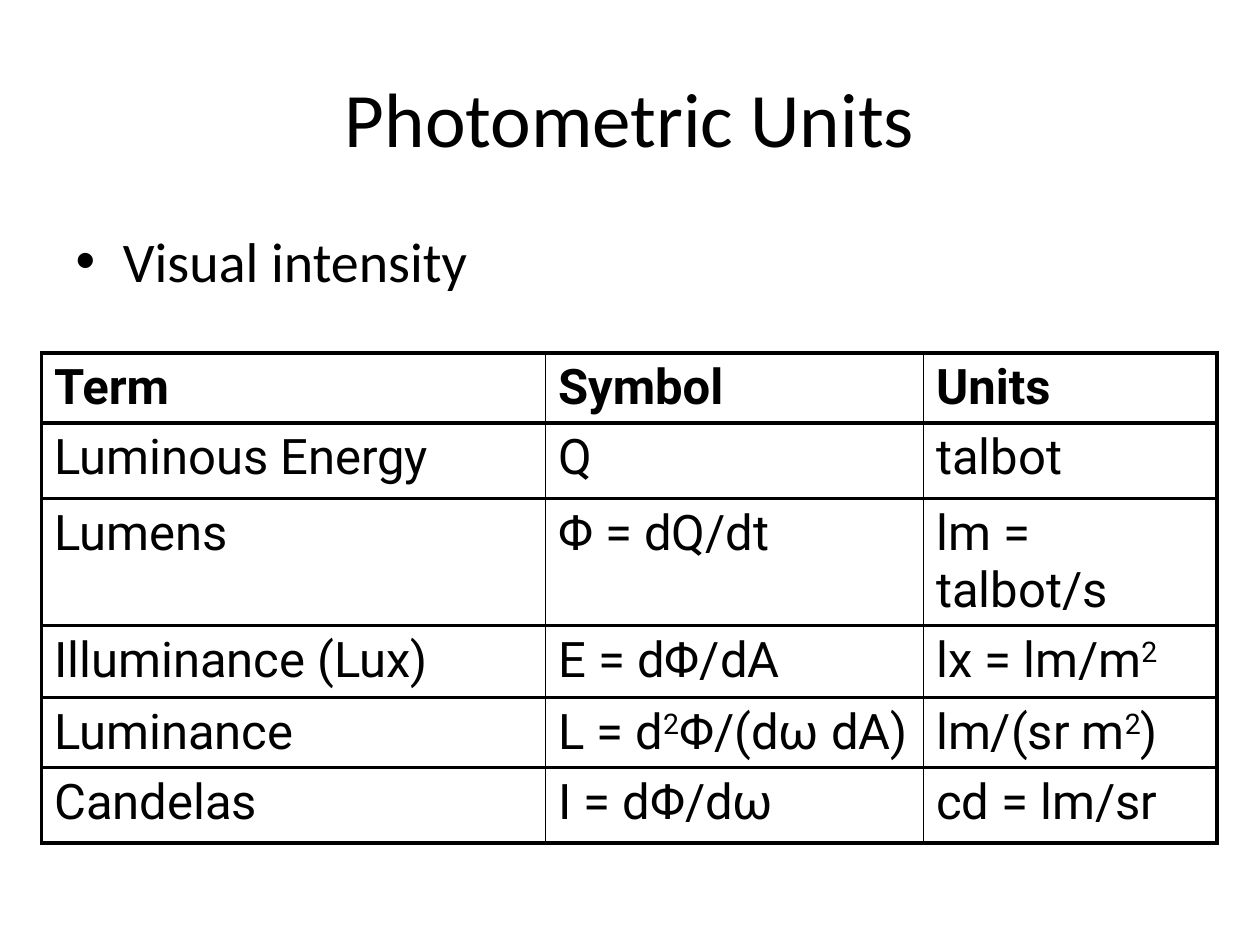
from lxml.etree import SubElement
from pptx import Presentation
from pptx.dml.color import RGBColor
from pptx.enum.text import MSO_ANCHOR, PP_ALIGN
from pptx.oxml.ns import qn
from pptx.util import Inches, Pt

BLACK = RGBColor(0, 0, 0)
THICK, THIN = Pt(2.25), Pt(1)
COLS = [4, 3, 2.33]
ROWS = [0.5, 0.6, 0.6, 0.57, 0.48, 0.6]
UNITS = [
    ["Term", "Symbol", "Units"],
    ["Luminous Energy", "Q", "talbot"],
    ["Lumens", "Φ = dQ/dt", "lm = talbot/s"],
    ["Illuminance (Lux)", "E = dΦ/dA", "lx = lm/m^2^"],
    ["Luminance", "L = d^2^Φ/(dω dA)", "lm/(sr m^2^)"],
    ["Candelas", "I = dΦ/dω", "cd = lm/sr"],
]


def style(run, size, face, bold=False):
    font = run.font
    font.size, font.name, font.bold = Pt(size), face, bold
    font.color.rgb = BLACK


def fill_holder(shape, box, text, size):
    shape.left, shape.top, shape.width, shape.height = map(Inches, box)
    shape.text_frame.text = text
    para = shape.text_frame.paragraphs[0]
    style(para.runs[0], size, "Calibri")
    return para


def add_title(slide, box):
    para = fill_holder(slide.shapes.title, box, "Photometric Units", 44)
    para.alignment = PP_ALIGN.CENTER
    slide.shapes.title.text_frame.vertical_anchor = MSO_ANCHOR.MIDDLE


def add_list(slide, box):
    fill_holder(slide.placeholders[1], box, "Visual intensity", 32)


def set_borders(cell, widths):
    props = cell._tc.get_or_add_tcPr()
    for spot, (side, width) in enumerate(widths.items()):
        line = SubElement(props, qn(f"a:ln{side}"), w=str(width))
        fill = SubElement(line, qn("a:solidFill"))
        SubElement(fill, qn("a:srgbClr"), val=str(BLACK))
        props.insert(spot, line)


def write_cell(cell, text, bold):
    para = cell.text_frame.paragraphs[0]
    space = SubElement(para._p.get_or_add_pPr(), qn("a:spcBef"))
    SubElement(space, qn("a:spcPct"), val="20000")
    for index, part in enumerate(text.split("^")):
        run = para.add_run()
        run.text = part
        style(run, 28, "Roboto", bold)
        if index % 2:
            run._r.get_or_add_rPr().set("baseline", "30000")


def add_units(slide, box):
    table = slide.shapes.add_table(len(ROWS), len(COLS), *map(Inches, box)).table
    table.first_row = table.horz_banding = False
    for column, width in zip(table.columns, COLS):
        column.width = Inches(width)
    for r, (height, texts) in enumerate(zip(ROWS, UNITS)):
        table.rows[r].height = Inches(height)
        for c, text in enumerate(texts):
            cell = table.cell(r, c)
            cell.fill.background()
            write_cell(cell, text, r == 0)
            set_borders(cell, {
                "L": THICK if c == 0 else THIN,
                "R": THICK if c == len(COLS) - 1 else THIN,
                "T": THICK,
                "B": THICK,
            })


def main():
    deck = Presentation()
    deck.slide_width, deck.slide_height = Inches(10), Inches(7.5)
    slide = deck.slides.add_slide(deck.slide_layouts[1])
    add_title(slide, (0.5, 0.3, 9, 1.25))
    add_list(slide, (0.5, 1.75, 9, 4.95))
    add_units(slide, (0.33, 2.8, sum(COLS), sum(ROWS)))
    deck.save("out.pptx")


if __name__ == "__main__":
    main()
